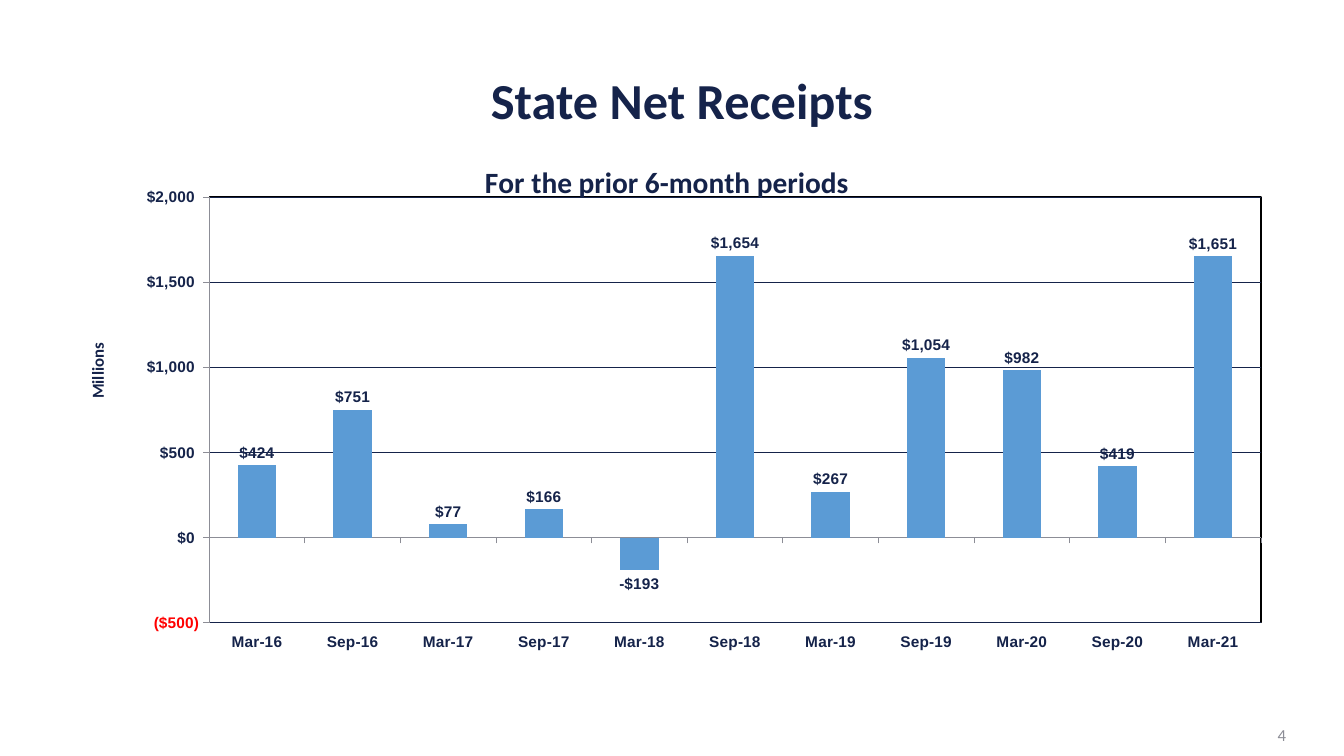
from dataclasses import dataclass

from lxml import etree
from pptx import Presentation
from pptx.chart.data import CategoryChartData
from pptx.dml.color import RGBColor
from pptx.enum.chart import XL_CHART_TYPE, XL_LABEL_POSITION, XL_TICK_LABEL_POSITION, XL_TICK_MARK
from pptx.enum.text import MSO_ANCHOR, PP_ALIGN
from pptx.oxml import parse_xml
from pptx.oxml.ns import nsdecls, qn
from pptx.util import Emu, Pt


@dataclass(frozen=True)
class Theme:
    navy: RGBColor = RGBColor(0x15, 0x23, 0x4A)
    gray: RGBColor = RGBColor(0x8C, 0x8D, 0x96)
    blue: RGBColor = RGBColor(0x5B, 0x9B, 0xD5)
    text_font: str = "Calibri"
    label_font: str = "Arial"
    title: int = 36
    chart_title: int = 21
    small: int = 12
    label: int = 11


THEME = Theme()
PX = 914400 / 100.8


def px(*lengths):
    return [Emu(round(length * PX)) for length in lengths]


def style(font, name, size, color, bold=True):
    font.name, font.size, font.bold = name, Pt(size), bold
    font.color.rgb = color


deck = Presentation()
deck.slide_width, deck.slide_height = px(1344, 756)
page = deck.slides.add_slide(deck.slide_layouts[5])

# Title
title = page.shapes.title
title.left, title.top, title.width, title.height = px(237, 72, 890, 63)
title.text_frame.vertical_anchor = MSO_ANCHOR.MIDDLE
para = title.text_frame.paragraphs[0]
para.alignment = PP_ALIGN.CENTER
para.line_spacing = 0.9
span = para.add_run()
span.text = "State Net Receipts"
style(span.font, THEME.text_font, THEME.title, THEME.navy)

# Receipts chart
receipts = {
    "Mar-16": 424, "Sep-16": 751, "Mar-17": 77, "Sep-17": 166,
    "Mar-18": -193, "Sep-18": 1654, "Mar-19": 267, "Sep-19": 1054,
    "Mar-20": 982, "Sep-20": 419, "Mar-21": 1651,
}
data = CategoryChartData()
data.categories = list(receipts)
data.add_series("Series 1", list(receipts.values()))
chart = page.shapes.add_chart(
    XL_CHART_TYPE.COLUMN_CLUSTERED, *px(71, 135, 1202, 539), data).chart
style(chart.font, THEME.text_font, 18, THEME.navy, bold=False)
chart.has_legend = False

plot = chart.plots[0]
plot.gap_width = 150
plot.vary_by_categories = False
columns = plot.series[0]
columns.invert_if_negative = False
columns.format.fill.solid()
columns.format.fill.fore_color.rgb = THEME.blue
labels = columns.data_labels
labels.show_value = True
labels.number_format = '"$"#,##0'
labels.number_format_is_linked = False
labels.position = XL_LABEL_POSITION.OUTSIDE_END
style(labels.font, THEME.label_font, THEME.label, THEME.navy)

months, dollars = chart.category_axis, chart.value_axis
for axis in (months, dollars):
    axis.major_tick_mark = XL_TICK_MARK.OUTSIDE
    axis.minor_tick_mark = XL_TICK_MARK.NONE
    axis.format.line.color.rgb = THEME.gray
    axis.format.line.width = Pt(0.5)
    style(axis.tick_labels.font, THEME.label_font, THEME.label, THEME.navy)
months.tick_label_position = XL_TICK_LABEL_POSITION.LOW
dollars.minimum_scale, dollars.maximum_scale, dollars.major_unit = -500, 2000, 500
dollars.tick_labels.number_format = '"$"#,##0_);[Red]\\("$"#,##0\\)'
dollars.tick_labels.number_format_is_linked = False
dollars.major_gridlines.format.line.color.rgb = THEME.navy
dollars.major_gridlines.format.line.width = Pt(0.5)

for owner, words, size in (
    (chart, "For the prior 6-month periods", THEME.chart_title),
    (dollars, "Millions", THEME.small),
):
    heading = owner.chart_title if owner is chart else owner.axis_title
    span = heading.text_frame.paragraphs[0].add_run()
    span.text = words
    style(span.font, THEME.text_font, size, THEME.navy)

# Fixed places inside the chart, as fractions of its frame
plot_area = chart._chartSpace.chart.plotArea
for element, place in (
    (chart.chart_title._element, {"x": 0.34, "y": 0.04}),
    (dollars.axis_title._element, {"x": 0.01, "y": 0.38}),
    (plot_area, {"x": 0.115, "y": 0.115, "w": 0.875, "h": 0.79}),
):
    for old_layout in element.findall(qn("c:layout")):
        element.remove(old_layout)
    layout = parse_xml(f"<c:layout {nsdecls('c')}><c:manualLayout/></c:layout>")
    settings = {"layoutTarget": "inner"} if element is plot_area else {}
    settings |= {"xMode": "edge", "yMode": "edge"} | place
    for name, value in settings.items():
        etree.SubElement(layout[0], qn(f"c:{name}")).set("val", str(value))
    element.insert(0 if element is plot_area else 1, layout)

plot_area.append(parse_xml(
    f"<c:spPr {nsdecls('c', 'a')}><a:noFill/><a:ln w='12700'><a:solidFill>"
    "<a:srgbClr val='000000'/></a:solidFill></a:ln></c:spPr>"))

# Page number
box = page.shapes.add_textbox(*px(994, 715, 302, 40))
box.text_frame.word_wrap = True
box.text_frame.vertical_anchor = MSO_ANCHOR.MIDDLE
para = box.text_frame.paragraphs[0]
para.alignment = PP_ALIGN.RIGHT
span = para.add_run()
span.text = "4"
style(span.font, THEME.text_font, THEME.small, THEME.gray, bold=False)

deck.save("out.pptx")
